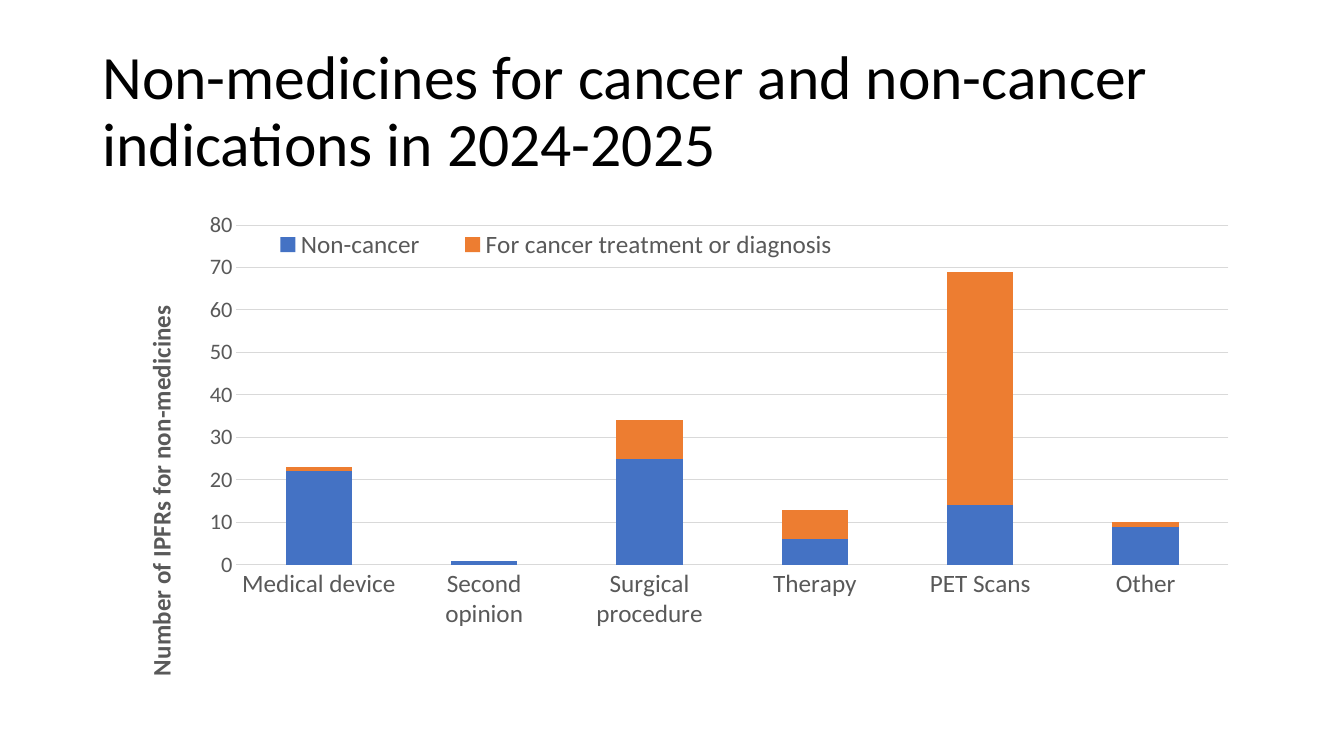
from lxml import etree
from pptx import Presentation
from pptx.chart.data import CategoryChartData
from pptx.dml.color import RGBColor
from pptx.enum.chart import XL_CHART_TYPE, XL_LEGEND_POSITION, XL_TICK_MARK
from pptx.enum.text import MSO_ANCHOR
from pptx.oxml.ns import qn
from pptx.util import Cm, Pt

STACKED = XL_CHART_TYPE.COLUMN_STACKED
LEGEND_TOP = XL_LEGEND_POSITION.TOP
NO_TICK = XL_TICK_MARK.NONE
MIDDLE = MSO_ANCHOR.MIDDLE

FONT = "Calibri"
BLACK = RGBColor(0x00, 0x00, 0x00)
GREY = RGBColor(0x59, 0x59, 0x59)
RULE = RGBColor(0xD9, 0xD9, 0xD9)
BLUE = RGBColor(0x44, 0x72, 0xC4)
ORANGE = RGBColor(0xED, 0x7D, 0x31)


def style_font(font, size, color):
    font.name = FONT
    font.size = Pt(size)
    font.color.rgb = color


def place(element, index, **settings):
    """Give a chart part a manual layout, in fractions of the chart."""
    for old in element.findall(qn("c:layout")):
        element.remove(old)
    layout = etree.Element(qn("c:layout"))
    manual = etree.SubElement(layout, qn("c:manualLayout"))
    for tag, value in settings.items():
        etree.SubElement(manual, qn("c:" + tag)).set("val", str(value))
    element.insert(index, layout)


prs = Presentation()
prs.slide_width, prs.slide_height = Cm(33.87), Cm(19.05)
slide = prs.slides.add_slide(prs.slide_layouts[6])

# Heading
heading = slide.shapes.add_textbox(Cm(2.33), Cm(1.01), Cm(29.21), Cm(3.68)).text_frame
heading.word_wrap = True
heading.vertical_anchor = MIDDLE
line = heading.paragraphs[0]
line.text = "Non-medicines for cancer and non-cancer indications in 2024-2025"
line.line_spacing = 0.9
style_font(line.font, 44, BLACK)

# Requests by category
requests = CategoryChartData()
requests.categories = ["Medical device", "Second opinion", "Surgical procedure",
                       "Therapy", "PET Scans", "Other"]
requests.add_series("Non-cancer", (22, 1, 25, 6, 14, 9))
requests.add_series("For cancer treatment or diagnosis", (1, 0, 9, 7, 55, 1))
chart = slide.shapes.add_chart(
    STACKED, Cm(2.33), Cm(4.02), Cm(29.21), Cm(13.13), requests).chart
chart.has_title = False
style_font(chart.font, 10, BLACK)

bars = chart.plots[0]
bars.gap_width = 150
bars.overlap = 100
bars.vary_by_categories = False
for series, color in zip(bars.series, (BLUE, ORANGE)):
    series.format.fill.solid()
    series.format.fill.fore_color.rgb = color

# Axes
categories, counts = chart.category_axis, chart.value_axis
for axis, size in ((categories, 18), (counts, 16)):
    axis.major_tick_mark = axis.minor_tick_mark = NO_TICK
    style_font(axis.tick_labels.font, size, GREY)
counts.minimum_scale, counts.maximum_scale, counts.major_unit = 0, 80, 10
counts.format.line.fill.background()
for rule in (categories.format.line, counts.major_gridlines.format.line):
    rule.color.rgb = RULE
    rule.width = Pt(0.75)

count_title = counts.axis_title.text_frame.paragraphs[0]
count_title.text = "Number of IPFRs for non-medicines"
style_font(count_title.font, 18, GREY)
count_title.font.bold = True

# Legend
legend = chart.legend if chart.has_legend else None
chart.has_legend = True
legend = chart.legend
legend.position = LEGEND_TOP
legend.include_in_layout = True
style_font(legend.font, 18, GREY)

# Positions inside the chart
plot_area = chart._chartSpace.chart.plotArea
place(plot_area, 0, layoutTarget="inner", xMode="edge", yMode="edge",
      x=0.124, y=0.127, w=0.856, h=0.658)
place(legend._element, 1, xMode="edge", yMode="edge", x=0.13, y=0.13, w=0.54, h=0.07)
place(counts.axis_title._element, 1, xMode="edge", yMode="edge", x=0.04, y=0.28)

prs.save("out.pptx")
